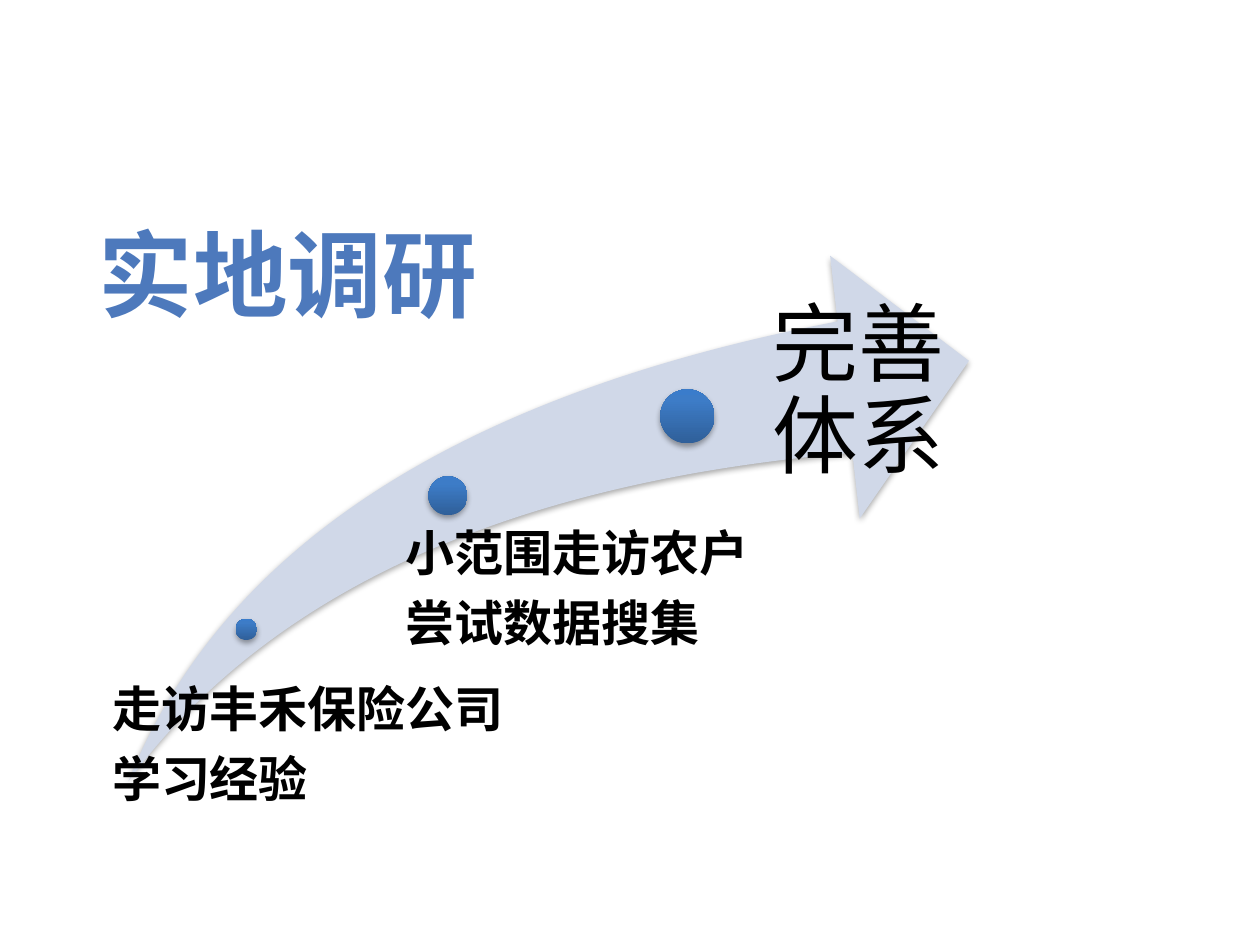
from lxml import etree
from pptx import Presentation
from pptx.dml.color import RGBColor
from pptx.enum.shapes import MSO_SHAPE
from pptx.enum.text import MSO_ANCHOR, MSO_AUTO_SIZE, PP_ALIGN
from pptx.oxml import parse_xml
from pptx.oxml.ns import qn
from pptx.util import Inches, Pt

SWOOSH, OVAL = MSO_SHAPE.SWOOSH_ARROW, MSO_SHAPE.OVAL
TOP, MIDDLE = MSO_ANCHOR.TOP, MSO_ANCHOR.MIDDLE
LEFT, CENTER = PP_ALIGN.LEFT, PP_ALIGN.CENTER
NO_FIT = MSO_AUTO_SIZE.NONE
CJK_FONT = "Noto Sans CJK JP"
DOT_STOPS = [(0, "2F5F99"), (80, "3D7CC7"), (100, "3A7CCB")]
NAMESPACE = 'xmlns:a="http://schemas.openxmlformats.org/drawingml/2006/main"'
SHADOW = (
    f'<a:effectLst {NAMESPACE}><a:outerShdw blurRad="40000" dist="23000" dir="5400000" rotWithShape="0">'
    '<a:srgbClr val="000000"><a:alpha val="35000"/></a:srgbClr></a:outerShdw></a:effectLst>'
)
STOPS = "".join(
    f'<a:gs pos="{position * 1000}"><a:srgbClr val="{color}"/></a:gs>' for position, color in DOT_STOPS
)
DOT_FILL = (
    f'<a:gradFill {NAMESPACE} rotWithShape="1"><a:gsLst>{STOPS}</a:gsLst>'
    '<a:lin ang="16200000" scaled="0"/></a:gradFill>'
)


def write_text(box, lines, size, font="Calibri", color="000000", bold=False, align=LEFT,
               anchor=TOP, inset=0.0, line_spacing=0.9, space_after=0.35, wrap=True):
    frame = box.text_frame
    frame.auto_size = NO_FIT
    frame.word_wrap = wrap
    frame.vertical_anchor = anchor
    frame.margin_left = Inches(inset)
    frame.margin_right = frame.margin_top = frame.margin_bottom = 0
    for index, line in enumerate(lines):
        para = frame.add_paragraph() if index else frame.paragraphs[0]
        para.alignment = align
        para.line_spacing = line_spacing
        para.space_before = Pt(0)
        para.space_after = Pt(size * space_after)
        span = para.add_run()
        span.text = line
        span.font.size = Pt(size)
        span.font.bold = bold
        span.font.name = font
        span.font.color.rgb = RGBColor.from_string(color)
        etree.SubElement(span.font._element, qn("a:ea")).set("typeface", font)


def add_shadowed(kind, left, top, width, height):
    shape = page.shapes.add_shape(kind, Inches(left), Inches(top), Inches(width), Inches(height))
    shape.line.fill.background()
    shape.fill.background()
    shape._element.spPr.append(parse_xml(SHADOW))
    return shape


deck = Presentation()
deck.slide_width, deck.slide_height = Inches(10), Inches(7.5)
page = deck.slides.add_slide(deck.slide_layouts[5])

title = page.shapes.title
title.left, title.top, title.width, title.height = Inches(0.66), Inches(1.66), Inches(3.25), Inches(1.01)
write_text(title, ["实地调研"], 54, font=CJK_FONT, color="4D79BC", bold=True, align=CENTER,
           anchor=MIDDLE, line_spacing=1.0, space_after=0, wrap=False)

swoosh = add_shadowed(SWOOSH, 1.02, 2.03, 6.67, 4.17)
swoosh.adjustments[0] = swoosh.adjustments[1] = 0.25
swoosh.fill.solid()
swoosh.fill.fore_color.rgb = RGBColor.from_string("D0D8E8")

for left, top, size in [(1.87, 4.91, 0.17), (3.4, 3.78, 0.31), (5.24, 3.09, 0.43)]:
    dot = add_shadowed(OVAL, left, top, size, size)
    properties = dot._element.spPr
    properties.replace(properties.find(qn("a:noFill")), parse_xml(DOT_FILL))

stages = [
    (0.8, 5.44, 4.08, 1.49, ["走访丰禾保险公司", "学习经验"], dict(size=28, bold=True, inset=0.09)),
    (3.05, 4.2, 3.25, 2.27, ["小范围走访农户", "尝试数据搜集"], dict(size=28, bold=True, inset=0.17)),
    (5.9, 2.39, 1.6, 2.08, ["完善体系"], dict(size=49, font=CJK_FONT, inset=0.23)),
]
for left, top, width, height, lines, text_format in stages:
    box = page.shapes.add_textbox(Inches(left), Inches(top), Inches(width), Inches(height))
    write_text(box, lines, **text_format)

deck.save("out.pptx")
